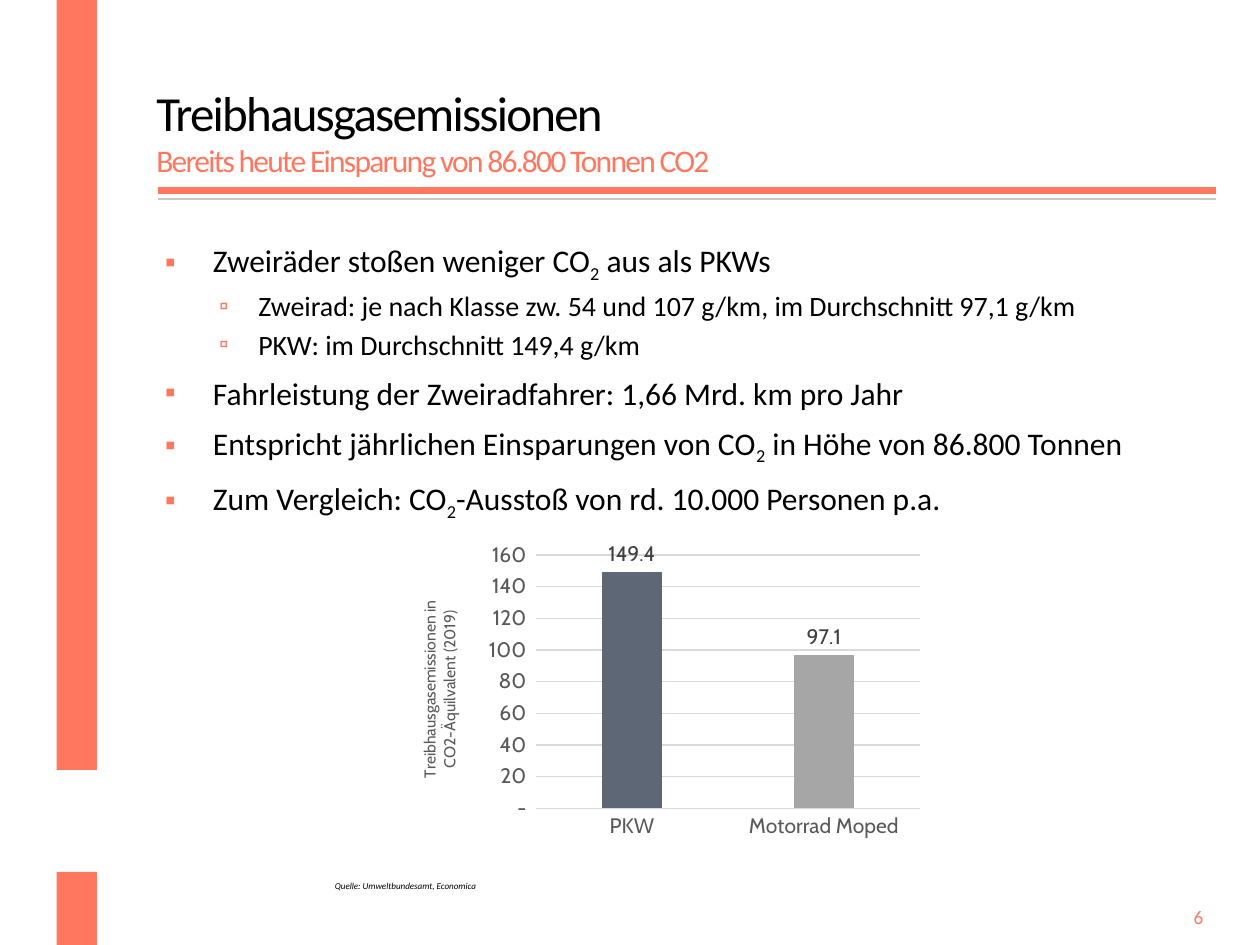
import lxml.etree
import pptx
import pptx.chart.data
import pptx.dml.color
import pptx.enum.chart
import pptx.enum.shapes
import pptx.enum.text
import pptx.oxml.ns
import pptx.util

Inches = pptx.util.Inches
Pt = pptx.util.Pt
ACCENT = "FF775F"
BLACK = "000000"
GRID = "D9D9D9"
BULLETS = [
    (0, "Zweiräder stoßen weniger CO|2| aus als PKWs"),
    (1, "Zweirad: je nach Klasse zw. 54 und 107 g/km, im Durchschnitt 97,1 g/km"),
    (1, "PKW: im Durchschnitt 149,4 g/km"),
    (0, "Fahrleistung der Zweiradfahrer: 1,66 Mrd. km pro Jahr"),
    (0, "Entspricht jährlichen Einsparungen von CO|2| in Höhe von 86.800 Tonnen"),
    (0, "Zum Vergleich: CO|2|-Ausstoß von rd. 10.000 Personen p.a."),
]
LEVELS = [
    dict(size=18, before=7, indent=0.45, hang=0.38, char="▪", percent=95),
    dict(size=16, before=3, indent=0.81, hang=0.31, char="▫", percent=90),
]


def rgb(color):
    return pptx.dml.color.RGBColor.from_string(color)


def sub(parent, tag, **attrs):
    return lxml.etree.SubElement(parent, pptx.oxml.ns.qn(tag), attrs)


def style(font, size, color, name="Calibri", bold=False, italic=False):
    font.name, font.size, font.bold, font.italic = name, Pt(size), bold, italic
    font.color.rgb = rgb(color)


def add_text(p, text, baseline=0, spacing=0, **fmt):
    r = p.add_run()
    r.text = text
    style(r.font, **fmt)
    rPr = r.font._element
    if baseline:
        rPr.set("baseline", str(baseline * 1000))
    if spacing:
        rPr.set("spc", str(spacing * 100))


def place(s, x, y, w, h, anchor):
    s.left, s.top, s.width, s.height = map(Inches, (x, y, w, h))
    tf = s.text_frame
    tf.word_wrap = True
    tf.auto_size = pptx.enum.text.MSO_AUTO_SIZE.NONE
    tf.vertical_anchor = anchor
    return tf


def add_bar(slide, x, y, w, h):
    s = slide.shapes.add_shape(
        pptx.enum.shapes.MSO_SHAPE.RECTANGLE, *map(Inches, (x, y, w, h)))
    s.shadow.inherit = False
    s.fill.solid()
    s.fill.fore_color.rgb = rgb(ACCENT)
    s.line.fill.background()


def add_rule(slide, y, color, width):
    s = slide.shapes.add_connector(
        pptx.enum.shapes.MSO_CONNECTOR.STRAIGHT, *map(Inches, (1.25, y, 9.65, y)))
    s.line.color.rgb = rgb(color)
    s.line.width = Pt(width)
    sub(s._element.spPr, "a:effectLst")


def add_title(slide):
    tf = place(slide.shapes.title, 1.14, 0.33, 8.51, 1.14,
               pptx.enum.text.MSO_ANCHOR.BOTTOM)
    p = tf.paragraphs[0]
    p.alignment = pptx.enum.text.PP_ALIGN.LEFT
    add_text(p, "Treibhausgasemissionen", size=28, color=BLACK, spacing=-1)
    p.add_line_break()
    add_text(p, "Bereits heute Einsparung von 86.800 Tonnen CO2",
             size=18, color=ACCENT, spacing=-1)


def add_bullet(p, level, text, first):
    fmt = LEVELS[level]
    p.level = level
    p.space_before = Pt(0 if first else fmt["before"])
    pPr = p._p.get_or_add_pPr()
    pPr.set("marL", str(Inches(fmt["indent"])))
    pPr.set("indent", str(-Inches(fmt["hang"])))
    sub(sub(pPr, "a:buClr"), "a:srgbClr", val=ACCENT)
    sub(pPr, "a:buSzPct", val=str(fmt["percent"] * 1000))
    sub(pPr, "a:buFont", typeface="Calibri")
    sub(pPr, "a:buChar", char=fmt["char"])
    for i, part in enumerate(text.split("|")):
        add_text(p, part, size=fmt["size"], color=BLACK, baseline=-25 * (i % 2))


def add_body(slide):
    tf = place(slide.placeholders[1], 1.14, 1.86, 8.28, 3.72,
               pptx.enum.text.MSO_ANCHOR.TOP)
    for i, (level, text) in enumerate(BULLETS):
        p = tf.add_paragraph() if i else tf.paragraphs[0]
        add_bullet(p, level, text, first=not i)


def add_label(slide, box, text, anchor, align, **fmt):
    s = slide.shapes.add_textbox(0, 0, 0, 0)
    p = place(s, *box, anchor).paragraphs[0]
    p.alignment = align
    add_text(p, text, **fmt)


def set_layout(parent, index, inner=False, **values):
    for old in parent.findall(pptx.oxml.ns.qn("c:layout")):
        parent.remove(old)
    layout = lxml.etree.Element(pptx.oxml.ns.qn("c:layout"))
    manual = sub(layout, "c:manualLayout")
    if inner:
        sub(manual, "c:layoutTarget", val="inner")
    for key in ("x", "y"):
        sub(manual, f"c:{key}Mode", val="edge")
    for key, value in values.items():
        sub(manual, f"c:{key}", val=str(value))
    parent.insert(index, layout)


def format_axes(chart):
    enums = pptx.enum.chart
    cat, val = chart.category_axis, chart.value_axis
    for axis in (cat, val):
        axis.major_tick_mark = axis.minor_tick_mark = enums.XL_TICK_MARK.NONE
        style(axis.tick_labels.font, 12, "595959", "Cabin")
    val.minimum_scale, val.maximum_scale, val.major_unit = 0, 160, 20
    val.tick_labels.number_format = r'_(* #,##0_);_(* \(#,##0\);_(* "-"_);_(@_)'
    val.tick_labels.number_format_is_linked = False
    val.format.line.fill.background()
    for line in (cat.format.line, val.major_gridlines.format.line):
        line.color.rgb = rgb(GRID)
        line.width = Pt(0.75)
    tf = val.axis_title.text_frame
    tf._txBody.bodyPr.set("rot", "-5400000")
    tf._txBody.bodyPr.set("vert", "horz")
    for p, text in ((tf.paragraphs[0], "Treibhausgasemissionen in"),
                    (tf.add_paragraph(), "CO2-Äquilvalent (2019)")):
        add_text(p, text, size=9, color="595959", name="Cabin")
    set_layout(val.axis_title._element, 1, x=0.04, y=0.17)


def add_emissions_chart(slide):
    data = pptx.chart.data.CategoryChartData()
    data.categories = ["PKW", "Motorrad Moped"]
    data.add_series("Series 1", [149.4, 97.1])
    chart = slide.shapes.add_chart(
        pptx.enum.chart.XL_CHART_TYPE.COLUMN_CLUSTERED,
        *map(Inches, (3.11, 4.3, 4.32, 2.55)), data).chart
    chart.has_legend = chart.has_title = False
    style(chart.font, 10, BLACK, "Cabin")
    format_axes(chart)
    plot = chart.plots[0]
    plot.vary_by_categories = False
    plot.gap_width, plot.overlap = 219, -27
    series = plot.series[0]
    series.format.fill.solid()
    series.format.fill.fore_color.rgb = rgb("D16349")
    for i, color in enumerate(["5D6775", "A6A6A6"]):
        fill = series.points[i].format.fill
        fill.solid()
        fill.fore_color.rgb = rgb(color)
    labels = series.data_labels
    labels.show_value = True
    labels.position = pptx.enum.chart.XL_LABEL_POSITION.OUTSIDE_END
    labels.number_format = "#,##0.0"
    labels.number_format_is_linked = False
    style(labels.font, 12, "404040", "Cabin")
    set_layout(chart._chartSpace.chart.plotArea, 0, inner=True,
               x=0.265, y=0.04, w=0.705, h=0.79)


def main():
    prs = pptx.Presentation()
    prs.slide_width, prs.slide_height = Inches(10), Inches(7.5)
    slide = prs.slides.add_slide(prs.slide_layouts[1])
    add_bar(slide, 0.45, 0, 0.32, 6.11)
    add_bar(slide, 0.45, 6.92, 0.32, 0.58)
    add_rule(slide, 1.51, ACCENT, 4)
    add_rule(slide, 1.58, "C8C8C8", 1.5)
    add_title(slide)
    add_body(slide)
    anchors, aligns = pptx.enum.text.MSO_ANCHOR, pptx.enum.text.PP_ALIGN
    add_label(slide, (9.06, 7.02, 0.59, 0.4), "6", anchors.BOTTOM, aligns.RIGHT,
              size=11, color=ACCENT)
    add_label(slide, (2.56, 6.94, 6.29, 0.17), "Quelle: Umweltbundesamt, Economica",
              anchors.TOP, aligns.LEFT, size=5.2, color=BLACK, italic=True)
    add_emissions_chart(slide)
    prs.save("out.pptx")


if __name__ == "__main__":
    main()
